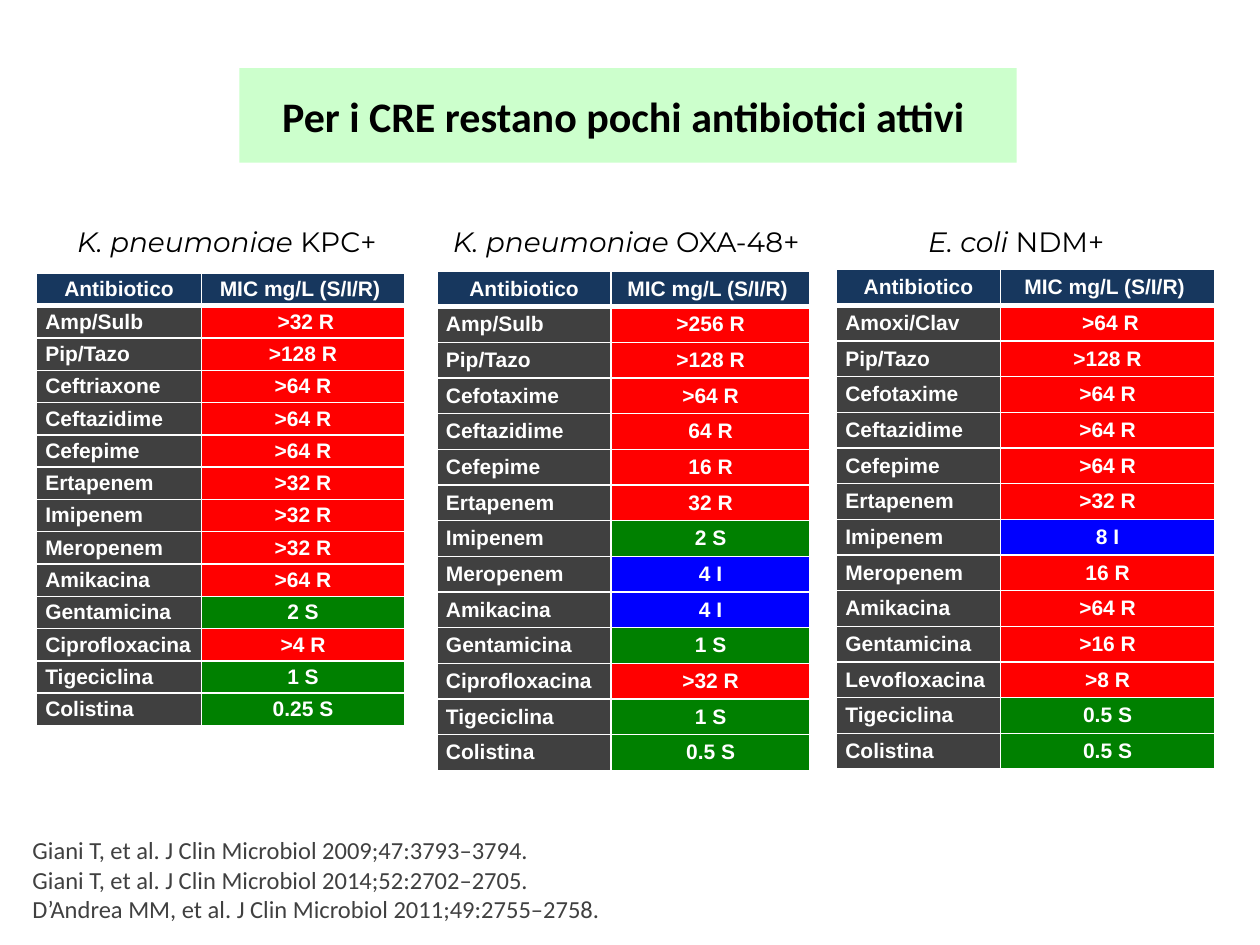
import pptx
import pptx.dml.color
import pptx.enum.shapes
import pptx.enum.text
import pptx.oxml
import pptx.oxml.ns
import pptx.util

Pt = pptx.util.Pt
ALIGN = pptx.enum.text.PP_ALIGN
ANCHOR = pptx.enum.text.MSO_ANCHOR

COLORS = {
    "title": "CCFFCC", "header": "17375E", "drug": "404040", "white": "FFFFFF",
    "black": "000000", "R": "FF0000", "I": "0000FF", "S": "008000",
}
TITLE = "Per i CRE restano pochi antibiotici attivi "
HEADER = ("Antibiotico", "MIC mg/L (S/I/R) ")
REFERENCES = [
    "Giani T, et al. J Clin Microbiol 2009;47:3793–3794.",
    "Giani T, et al. J Clin Microbiol 2014;52:2702–2705.",
    "D’Andrea MM, et al. J Clin Microbiol 2011;49:2755–2758.",
]
# Boxes are left, top, width, height in percent of the slide; padding is in points.
PANELS = [
    {
        "species": "K. pneumoniae", "enzyme": " KPC+", "caption": (4.1, 23.07, 27.8, 4.93),
        "table": (2.9, 28.93, 29.2, 51.33), "columns": (13.1, 16.1), "padding": 2.5,
        "results": [
            ("Amp/Sulb", " >32 R"), ("Pip/Tazo", ">128 R"), ("Ceftriaxone", ">64 R"),
            ("Ceftazidime", ">64 R"), ("Cefepime", ">64 R"), ("Ertapenem", ">32 R"),
            ("Imipenem", ">32 R"), ("Meropenem", ">32 R"), ("Amikacina", ">64 R"),
            ("Gentamicina", "2 S"), ("Ciprofloxacina", ">4 R"), ("Tigeciclina", "1 S"),
            ("Colistina", "0.25 S"),
        ],
    },
    {
        "species": "K. pneumoniae ", "enzyme": "OXA-48+", "caption": (34, 23.07, 31.4, 4.93),
        "table": (34.7, 28.67, 29.6, 51.33), "columns": (13.8, 15.8), "padding": 3,
        "results": [
            ("Amp/Sulb", ">256 R"), ("Pip/Tazo", ">128 R"), ("Cefotaxime", ">64 R"),
            ("Ceftazidime", "64 R"), ("Cefepime", "16 R"), ("Ertapenem", "32 R"),
            ("Imipenem", "2 S"), ("Meropenem", "4 I"), ("Amikacina", "4 I"),
            ("Gentamicina", "1 S"), ("Ciprofloxacina", ">32 R"), ("Tigeciclina", "1 S"),
            ("Colistina", "0.5 S"),
        ],
    },
    {
        "species": "E. coli", "enzyme": " NDM+", "caption": (69, 23.07, 23.3, 4.93),
        "table": (66.4, 28.53, 30, 51.33), "columns": (13, 17), "padding": 3,
        "results": [
            ("Amoxi/Clav", " >64 R"), ("Pip/Tazo", ">128 R"), ("Cefotaxime", ">64 R"),
            ("Ceftazidime", ">64 R"), ("Cefepime", ">64 R"), ("Ertapenem", ">32 R"),
            ("Imipenem", "8 I"), ("Meropenem", "16 R"), ("Amikacina", ">64 R"),
            ("Gentamicina", ">16 R"), ("Levofloxacina", ">8 R"), ("Tigeciclina", "0.5 S"),
            ("Colistina", "0.5 S"),
        ],
    },
]
ROW_HEIGHT = 3.07

presentation = pptx.Presentation()
presentation.slide_width = pptx.util.Inches(10)
presentation.slide_height = pptx.util.Inches(7.5)
slide = presentation.slides.add_slide(presentation.slide_layouts[6])


def across(percent):
    return round(presentation.slide_width * percent / 100)


def down(percent):
    return round(presentation.slide_height * percent / 100)


def place(box):
    left, top, width, height = box
    return across(left), down(top), across(width), down(height)


def rgb(name):
    return pptx.dml.color.RGBColor.from_string(COLORS[name])


def set_font(paragraph, name, size, color, bold=False):
    paragraph.font.name = name
    paragraph.font.size = Pt(size)
    paragraph.font.color.rgb = rgb(color)
    paragraph.font.bold = bold


def add_borders(cell, bottom):
    """Rule a cell in white: 1 point on each side, `bottom` points below."""
    properties = cell._tc.get_or_add_tcPr()
    for side, points in (("L", 1), ("R", 1), ("T", 1), ("B", bottom)):
        properties.append(pptx.oxml.parse_xml(
            f'<a:ln{side} {pptx.oxml.ns.nsdecls("a")} w="{Pt(points)}">'
            f'<a:solidFill><a:srgbClr val="{COLORS["white"]}"/></a:solidFill></a:ln{side}>'
        ))


def fill_cell(cell, text, fill, centered, padding, bottom=1):
    add_borders(cell, bottom)
    cell.fill.solid()
    cell.fill.fore_color.rgb = rgb(fill)
    cell.margin_left = cell.margin_right = Pt(5)
    cell.margin_top = cell.margin_bottom = Pt(padding)
    cell.vertical_anchor = ANCHOR.MIDDLE
    cell.text = text
    paragraph = cell.text_frame.paragraphs[0]
    paragraph.alignment = ALIGN.CENTER if centered else ALIGN.LEFT
    set_font(paragraph, "Arial", 12, "white", bold=True)


def add_results_table(panel):
    results, padding = panel["results"], panel["padding"]
    frame = slide.shapes.add_table(len(results) + 1, len(HEADER), *place(panel["table"]))
    table = frame.table
    table.first_row = table.horz_banding = False
    for column, width in zip(table.columns, panel["columns"]):
        column.width = across(width)
    for row in table.rows:
        row.height = down(ROW_HEIGHT)
    for column, text in enumerate(HEADER):
        fill_cell(table.cell(0, column), text, "header", True, padding, bottom=3)
    for row, (drug, mic) in enumerate(results, start=1):
        fill_cell(table.cell(row, 0), drug, "drug", False, padding)
        fill_cell(table.cell(row, 1), mic, mic[-1], True, padding)
    frame.height = down(panel["table"][3])


def add_caption(panel):
    text_frame = slide.shapes.add_textbox(*place(panel["caption"])).text_frame
    text_frame.word_wrap = True
    paragraph = text_frame.paragraphs[0]
    paragraph.alignment = ALIGN.CENTER
    set_font(paragraph, "Montserrat", 16, "black")
    for text, italic in ((panel["species"], True), (panel["enzyme"], False)):
        run = paragraph.add_run()
        run.text = text
        run.font.italic = italic


def add_references():
    text_frame = slide.shapes.add_textbox(*place((1.6, 87.6, 79.4, 10.8))).text_frame
    text_frame.word_wrap = True
    text_frame.vertical_anchor = ANCHOR.BOTTOM
    text_frame.text = "\n".join(REFERENCES)
    for paragraph in text_frame.paragraphs:
        set_font(paragraph, "Calibri", 14, "drug")


def add_title():
    shape = slide.shapes.add_shape(
        pptx.enum.shapes.MSO_SHAPE.RECTANGLE, *place((19, 7.2, 61.7, 10)))
    shape.shadow.inherit = False
    shape.fill.solid()
    shape.fill.fore_color.rgb = rgb("title")
    shape.line.fill.background()
    text_frame = shape.text_frame
    text_frame.word_wrap = True
    text_frame.vertical_anchor = ANCHOR.MIDDLE
    text_frame.margin_left = text_frame.margin_right = Pt(5)
    text_frame.margin_top = text_frame.margin_bottom = Pt(2.5)
    text_frame.text = TITLE
    paragraph = text_frame.paragraphs[0]
    paragraph.alignment = ALIGN.CENTER
    set_font(paragraph, "Calibri", 24, "black", bold=True)


for panel in PANELS:
    add_results_table(panel)
    add_caption(panel)
add_references()
add_title()
presentation.save("out.pptx")
